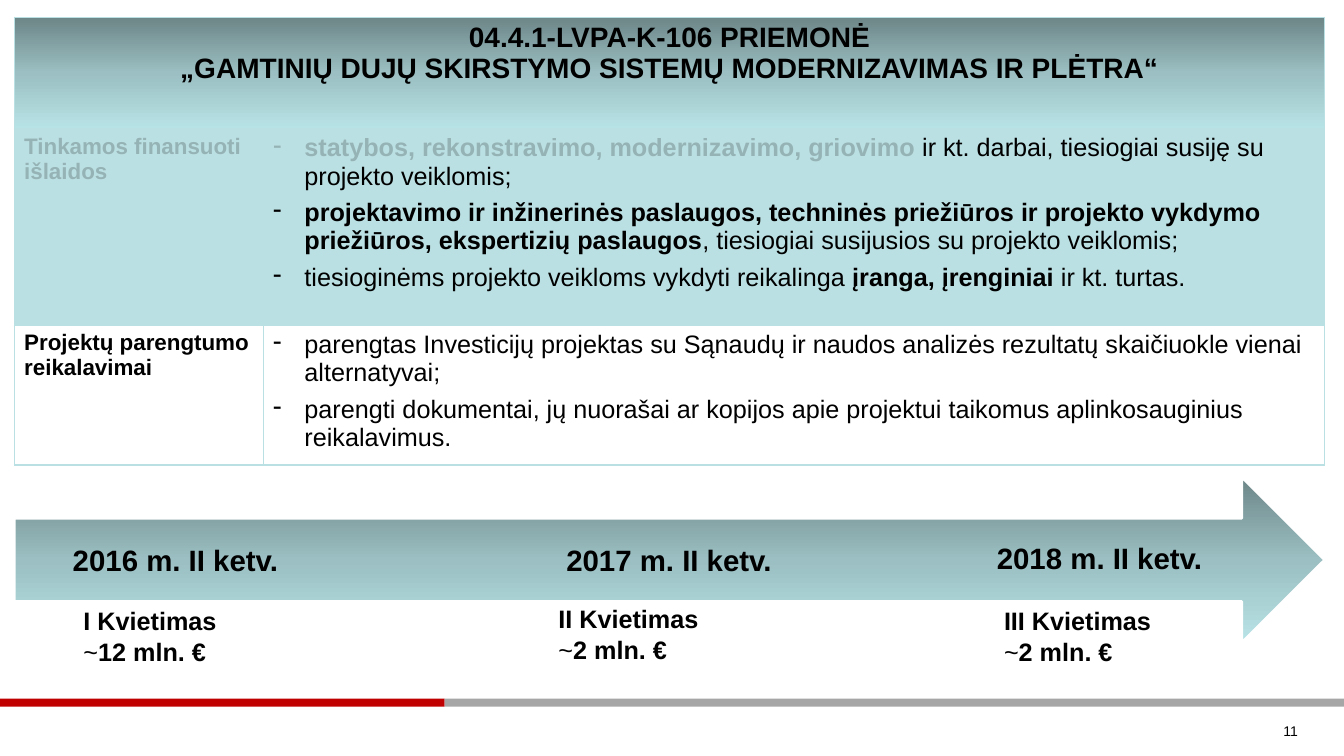
from copy import deepcopy

from lxml.etree import SubElement
from pptx import Presentation
from pptx.dml.color import RGBColor
from pptx.enum.shapes import MSO_SHAPE
from pptx.enum.text import MSO_ANCHOR, PP_ALIGN
from pptx.oxml import parse_xml
from pptx.oxml.ns import nsdecls, qn
from pptx.util import Inches, Pt

BLACK = RGBColor(0x00, 0x00, 0x00)
WHITE = RGBColor(0xFF, 0xFF, 0xFF)
RED = RGBColor(0xC0, 0x00, 0x00)
GREY = RGBColor(0xA6, 0xA6, 0xA6)
AQUA = RGBColor(0xBB, 0xE0, 0xE3)
SHADES = [
    (0, RGBColor(0x6D, 0x86, 0x88)),
    (0.5, RGBColor(0x9B, 0xBF, 0xC2)),
    (1, RGBColor(0xB8, 0xE3, 0xE6)),
]

TITLE = [
    [("04.4.1-LVPA-K-106 PRIEMONĖ", True)],
    [("„GAMTINIŲ DUJŲ SKIRSTYMO SISTEMŲ MODERNIZAVIMAS IR PLĖTRA“", True)],
]
ROWS = [
    ("Tinkamos finansuoti išlaidos", [
        [("statybos, rekonstravimo, modernizavimo, griovimo ", True),
         ("ir kt. darbai, tiesiogiai susiję su projekto veiklomis;", False)],
        [("projektavimo ir inžinerinės paslaugos, techninės priežiūros ir projekto "
          "vykdymo priežiūros, ekspertizių paslaugos", True),
         (", tiesiogiai susijusios su projekto veiklomis;", False)],
        [("tiesioginėms projekto veikloms vykdyti reikalinga ", False),
         ("įranga, įrenginiai ", True),
         ("ir kt. turtas.", False)],
    ]),
    ("Projektų parengtumo reikalavimai", [
        [("parengtas Investicijų projektas su Sąnaudų ir naudos analizės rezultatų "
          "skaičiuokle vienai alternatyvai;", False)],
        [("parengti dokumentai, jų nuorašai ar kopijos apie projektui taikomus "
          "aplinkosauginius reikalavimus.", False)],
    ]),
]
MILESTONES = [
    ("2016 m. II ketv.", (0.54, 0.43, 2.12)),
    ("2017 m. II ketv.", (4.88, 0.43, 3.23)),
    ("2018 m. II ketv.", (9.09, 0.41, 3.35)),
]
CALLS = [
    ("I Kvietimas", "12 mln. €", (0.59, 1.23, 2.47)),
    ("II Kvietimas", "2 mln. €", (5.3, 1.21, 2.4)),
    ("III Kvietimas", "2 mln. €", (9.72, 1.23, 2.43)),
]


def write_text(frame, paragraphs, size, align=PP_ALIGN.LEFT, spacing=None, after=0, dash=False):
    """Fill a text frame with paragraphs made of (text, bold) spans."""
    frame.word_wrap = True
    for index, spans in enumerate(paragraphs):
        para = frame.add_paragraph() if index else frame.paragraphs[0]
        para.alignment = align
        para.space_after = Pt(after)
        if spacing:
            para.line_spacing = spacing
        if dash:
            properties = para._p.get_or_add_pPr()
            properties.set("marL", str(Inches(0.31)))
            properties.set("indent", str(-Inches(0.31)))
            SubElement(properties, qn("a:buChar")).set("char", "-")
        for text, bold in spans:
            span = para.add_run()
            span.text = text
            span.font.name = "Arial"
            span.font.size = Pt(size)
            span.font.bold = bold
            span.font.color.rgb = BLACK


def add_label(page, left, top, width, height, paragraphs, size, margin=None,
              anchor=MSO_ANCHOR.TOP, **style):
    """Add a text box; margin holds its (horizontal, vertical) insets."""
    box = page.shapes.add_textbox(Inches(left), Inches(top), Inches(width), Inches(height))
    frame = box.text_frame
    frame.vertical_anchor = anchor
    if margin:
        frame.margin_left = frame.margin_right = Inches(margin[0])
        frame.margin_top = frame.margin_bottom = Inches(margin[1])
    write_text(frame, paragraphs, size, **style)


def shade(fill, element):
    """Give a fill the three-step vertical gradient."""
    fill.gradient()
    fill.gradient_angle = 270
    stops = next(element.iter(qn("a:gsLst")))
    stops.append(deepcopy(stops[0]))
    for stop, (position, color) in zip(fill.gradient_stops, SHADES):
        stop.position = position
        stop.color.rgb = color


def add_borders(cell):
    """Draw thin aqua lines on the four sides of a cell."""
    properties = cell._tc.get_or_add_tcPr()
    for index, side in enumerate("LRTB"):
        properties.insert(index, parse_xml(
            f'<a:ln{side} {nsdecls("a")} w="{Pt(1)}"><a:solidFill>'
            f'<a:srgbClr val="{AQUA}"/></a:solidFill></a:ln{side}>'))


def add_measure_table(page, left, top, width, height):
    """Add the table with the measure title, eligible costs and requirements."""
    table = page.shapes.add_table(
        3, 2, Inches(left), Inches(top), Inches(width), Inches(height)).table
    table.first_row = table.horz_banding = False
    label_width = 2.47
    for column, size in zip(table.columns, (label_width, width - label_width)):
        column.width = Inches(size)
    for row, size in zip(table.rows, (1.11, 1.95, height - 3.06)):
        row.height = Inches(size)

    header = table.cell(0, 0)
    header.merge(table.cell(0, 1))
    write_text(header.text_frame, TITLE, 20, align=PP_ALIGN.CENTER)
    shade(header.fill, header._tc)
    for index, (label, items) in enumerate(ROWS, start=1):
        write_text(table.cell(index, 0).text_frame, [[(label, True)]], 16)
        write_text(table.cell(index, 1).text_frame, items, 18, after=6, dash=True)
    for cell in (table.cell(1, 0), table.cell(1, 1)):
        cell.fill.solid()
        cell.fill.fore_color.rgb = AQUA
        color = next(cell._tc.iter(qn("a:srgbClr")))
        SubElement(color, qn("a:alpha")).set("val", "20000")
    for cell in (table.cell(2, 0), table.cell(2, 1)):
        cell.fill.background()
    for cell in table.iter_cells():
        add_borders(cell)


def add_timeline(page, left, top, width, height):
    """Add the arrow with its quarters and the calls below them."""
    arrow = page.shapes.add_shape(
        MSO_SHAPE.RIGHT_ARROW, Inches(left), Inches(top), Inches(width), Inches(height))
    arrow.shadow.inherit = False
    shade(arrow.fill, arrow._element)
    arrow.line.color.rgb = WHITE
    arrow.line.width = Pt(2)
    for quarter, (x, y, span_width) in MILESTONES:
        add_label(page, left + x, top + y, span_width, 0.83, [[(quarter, True)]], 21,
                  margin=(0, 0.23), anchor=MSO_ANCHOR.MIDDLE,
                  align=PP_ALIGN.CENTER, spacing=0.9)
    for name, amount, (x, y, span_width) in CALLS:
        add_label(page, left + x, top + y, span_width, 0.71,
                  [[(name, True)], [("~", False), (amount, True)]], 18)


def add_footer(page, left, top, width, height):
    """Add the two-colour rule and the page number."""
    red_width = 4.41
    for x, bar_width, color in ((0, red_width, RED), (red_width, width - red_width, GREY)):
        bar = page.shapes.add_shape(
            MSO_SHAPE.RECTANGLE, Inches(left + x), Inches(top), Inches(bar_width), Inches(0.08))
        bar.shadow.inherit = False
        bar.fill.solid()
        bar.fill.fore_color.rgb = color
        bar.line.fill.background()
    add_label(page, left + 9.86, top + 0.08, 3.11, height - 0.08, [[("11", False)]], 10,
              anchor=MSO_ANCHOR.MIDDLE, align=PP_ALIGN.RIGHT)


def main():
    """Build the slide and save the deck."""
    deck = Presentation()
    deck.slide_width = Inches(13.33)
    deck.slide_height = Inches(7.5)
    page = deck.slides.add_slide(deck.slide_layouts[6])
    add_footer(page, 0, 6.93, 13.33, 0.57)
    add_measure_table(page, 0.14, 0.17, 13, 4.44)
    add_timeline(page, 0.14, 4.73, 13, 1.65)
    deck.save("out.pptx")


if __name__ == "__main__":
    main()
